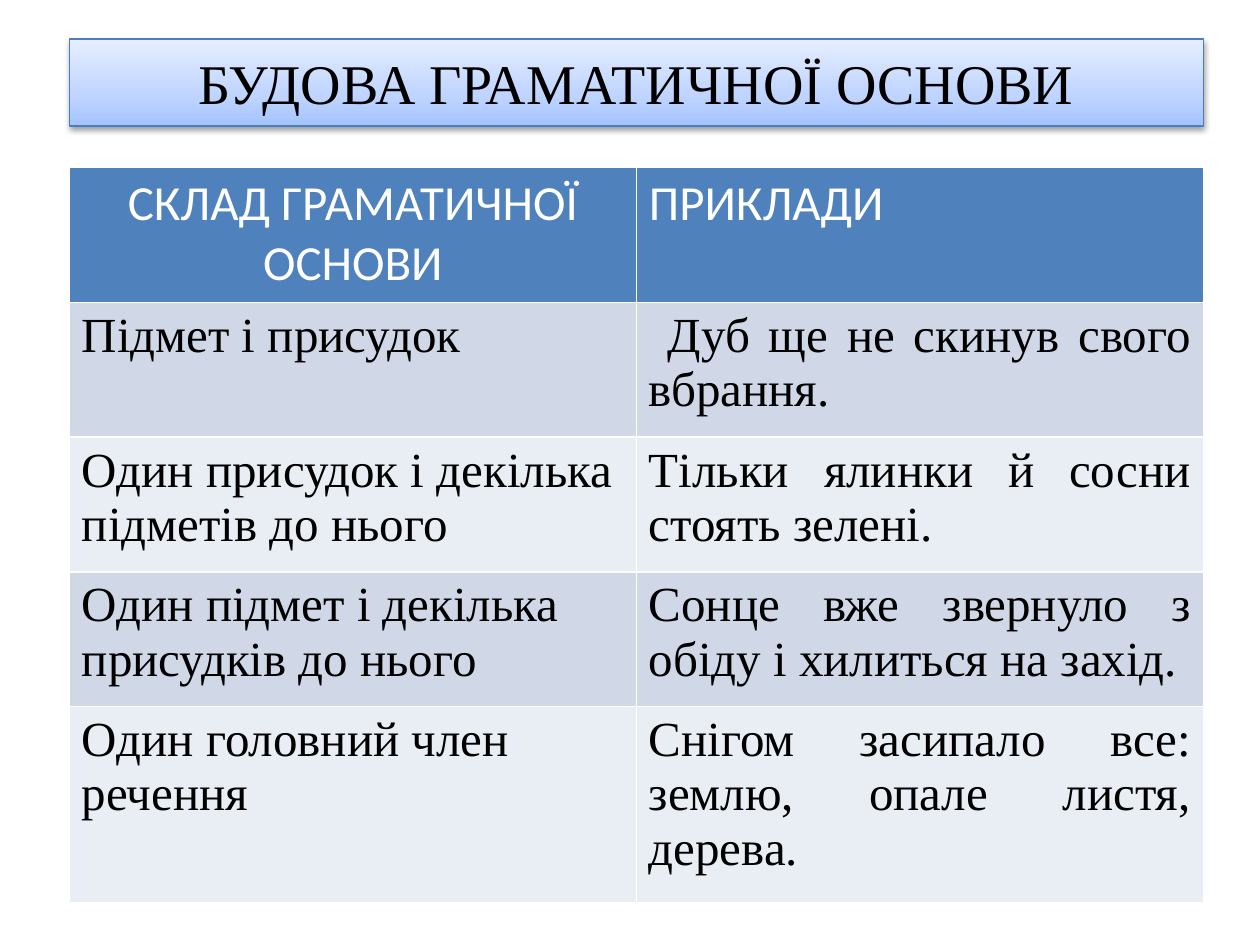
from lxml import etree
from pptx import Presentation
from pptx.dml.color import RGBColor
from pptx.enum import shapes, text
from pptx.util import Inches, Pt

TITLE = "БУДОВА ГРАМАТИЧНОЇ ОСНОВИ"
HEADER = ("СКЛАД ГРАМАТИЧНОЇ ОСНОВИ", "ПРИКЛАДИ")
ROWS = [
    ("Підмет і присудок", " Дуб ще не скинув свого вбрання."),
    ("Один присудок і декілька підметів до нього",
     "Тільки ялинки й сосни стоять зелені."),
    ("Один підмет і декілька присудків до нього",
     "Сонце вже звернуло з обіду і хилиться на захід."),
    ("Один головний член речення",
     "Снігом засипало все: землю, опале листя, дерева."),
]
COLORS = {"black": "000000", "white": "FFFFFF", "line": "4B7EBC",
          "header": "4F81BD", "odd": "D0D8E8", "even": "E9EDF4"}
GRADIENT = [(0, "A4C4FF"), (35, "BFD4FF"), (100, "E6EEFF")]
SERIF, SANS = "Times New Roman", "Calibri"
LEFT, WIDTH = 0.55, 9
ROW_HEIGHTS = [1.07] * 4 + [1.56]
NS = 'xmlns:a="http://schemas.openxmlformats.org/drawingml/2006/main"'
ALIGN = text.PP_ALIGN


def rgb(name):
    return RGBColor.from_string(COLORS[name])


def write(tf, content, size=28, font=SERIF, color="black", align=ALIGN.LEFT):
    tf.word_wrap = True
    p = tf.paragraphs[0]
    p.alignment = align
    r = p.add_run()
    r.text = content
    r.font.size, r.font.name, r.font.bold = Pt(size), font, False
    r.font.color.rgb = rgb(color)


def add_title(slide):
    sp = slide.shapes.add_shape(shapes.MSO_SHAPE.RECTANGLE, Inches(LEFT),
                                Inches(0.31), Inches(WIDTH), Inches(0.69))
    sp.line.color.rgb = rgb("line")
    sp.line.width = Pt(0.75)
    stops = "".join(f'<a:gs pos="{pos * 1000}"><a:srgbClr val="{c}"/></a:gs>'
                    for pos, c in GRADIENT)
    fill = (f'<a:gradFill {NS} rotWithShape="1"><a:gsLst>{stops}</a:gsLst>'
            '<a:lin ang="16200000" scaled="0"/></a:gradFill>')
    shadow = (f'<a:effectLst {NS}><a:outerShdw blurRad="{Pt(3.1)}" '
              f'dist="{Pt(1.6)}" dir="5400000" rotWithShape="0">'
              f'<a:srgbClr val="{COLORS["black"]}"><a:alpha val="38000"/>'
              '</a:srgbClr></a:outerShdw></a:effectLst>')
    ln = sp.line._get_or_add_ln()
    ln.addprevious(etree.fromstring(fill))
    ln.addnext(etree.fromstring(shadow))
    sp.text_frame.vertical_anchor = text.MSO_ANCHOR.MIDDLE
    write(sp.text_frame, TITLE, size=32, align=ALIGN.CENTER)


def add_examples(slide):
    """Table whose white rules come from the default table style."""
    table = slide.shapes.add_table(
        len(ROWS) + 1, len(HEADER), Inches(LEFT), Inches(1.33),
        Inches(WIDTH), Inches(sum(ROW_HEIGHTS))).table
    for row, height in zip(table.rows, ROW_HEIGHTS):
        row.height = Inches(height)
    for i, row in enumerate([HEADER] + ROWS):
        for j, content in enumerate(row):
            cell = table.cell(i, j)
            cell.fill.solid()
            align = ALIGN.JUSTIFY if j else ALIGN.LEFT
            if i == 0:
                cell.fill.fore_color.rgb = rgb("header")
                write(cell.text_frame, content, font=SANS, color="white",
                      align=align if j else ALIGN.CENTER)
            else:
                cell.fill.fore_color.rgb = rgb("odd" if i % 2 else "even")
                write(cell.text_frame, content, align=align)


def main():
    prs = Presentation()
    prs.slide_width, prs.slide_height = Inches(10), Inches(7.5)
    slide = prs.slides.add_slide(prs.slide_layouts[6])
    add_title(slide)
    add_examples(slide)
    prs.save("out.pptx")


if __name__ == "__main__":
    main()
